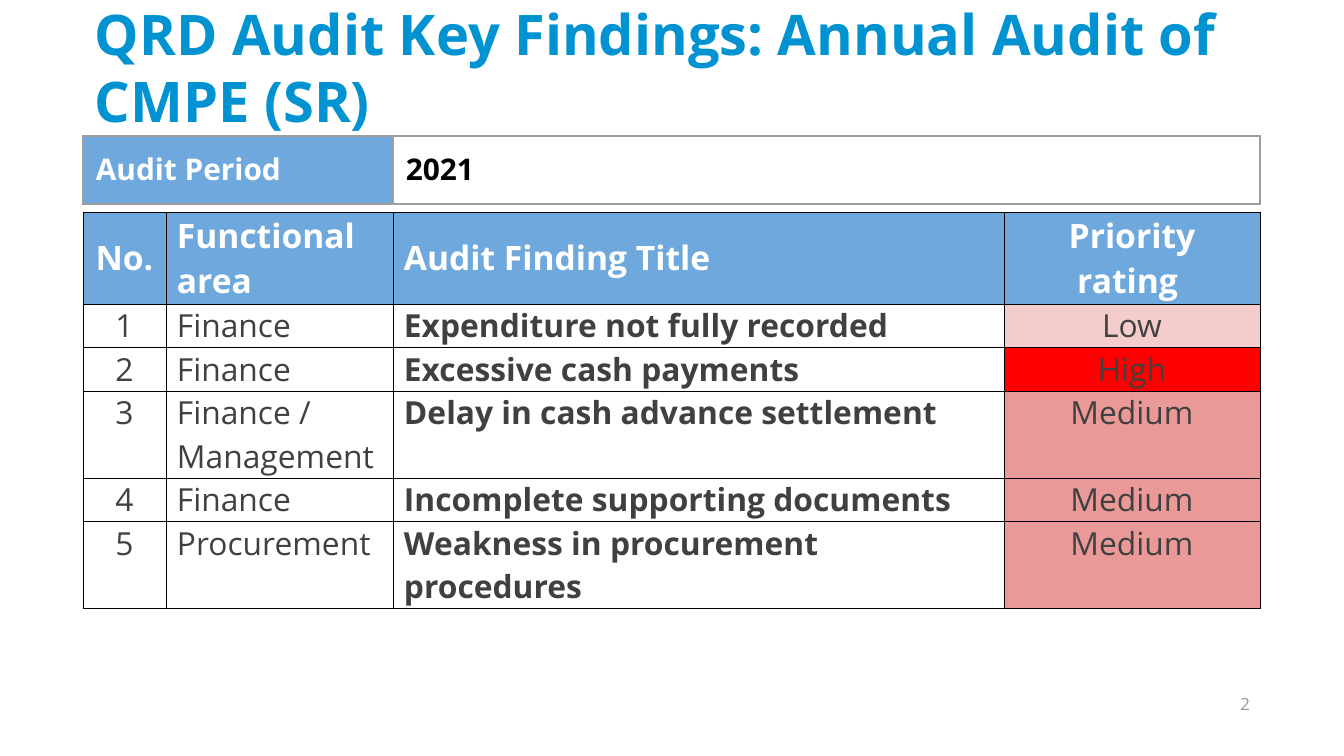
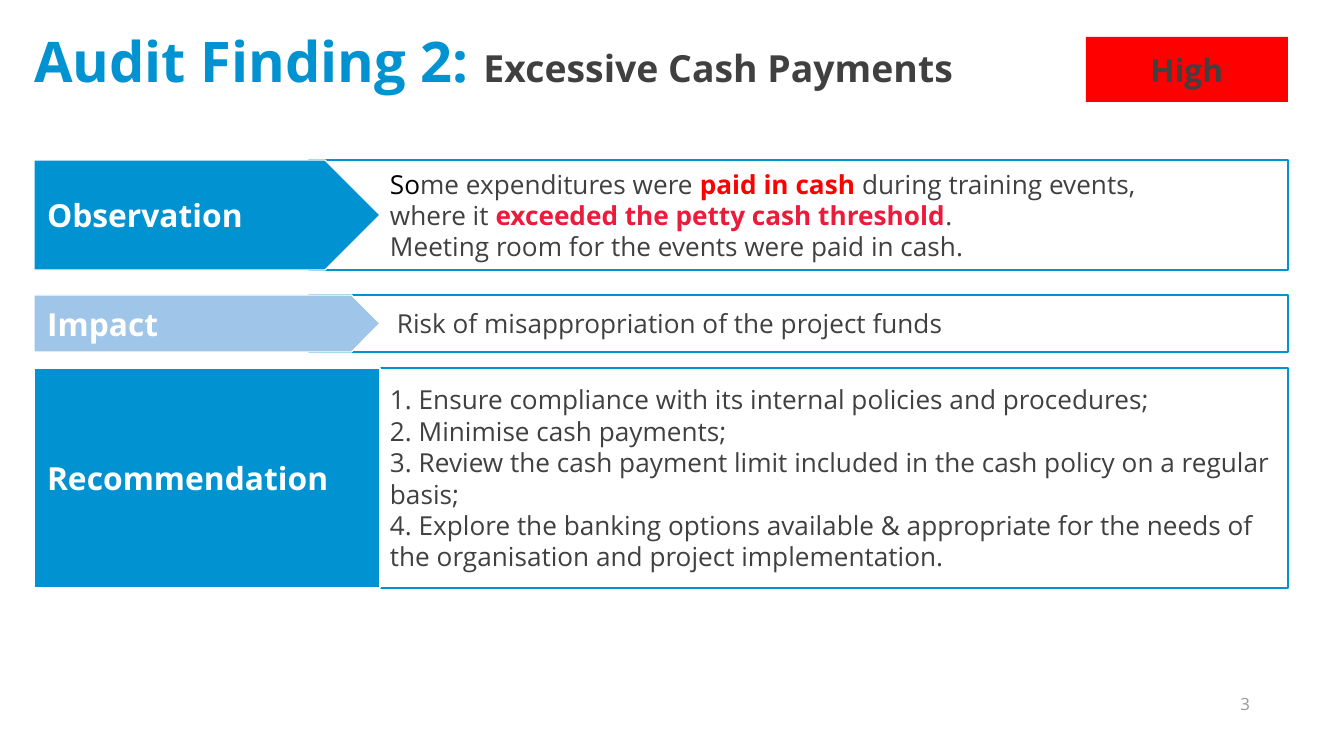
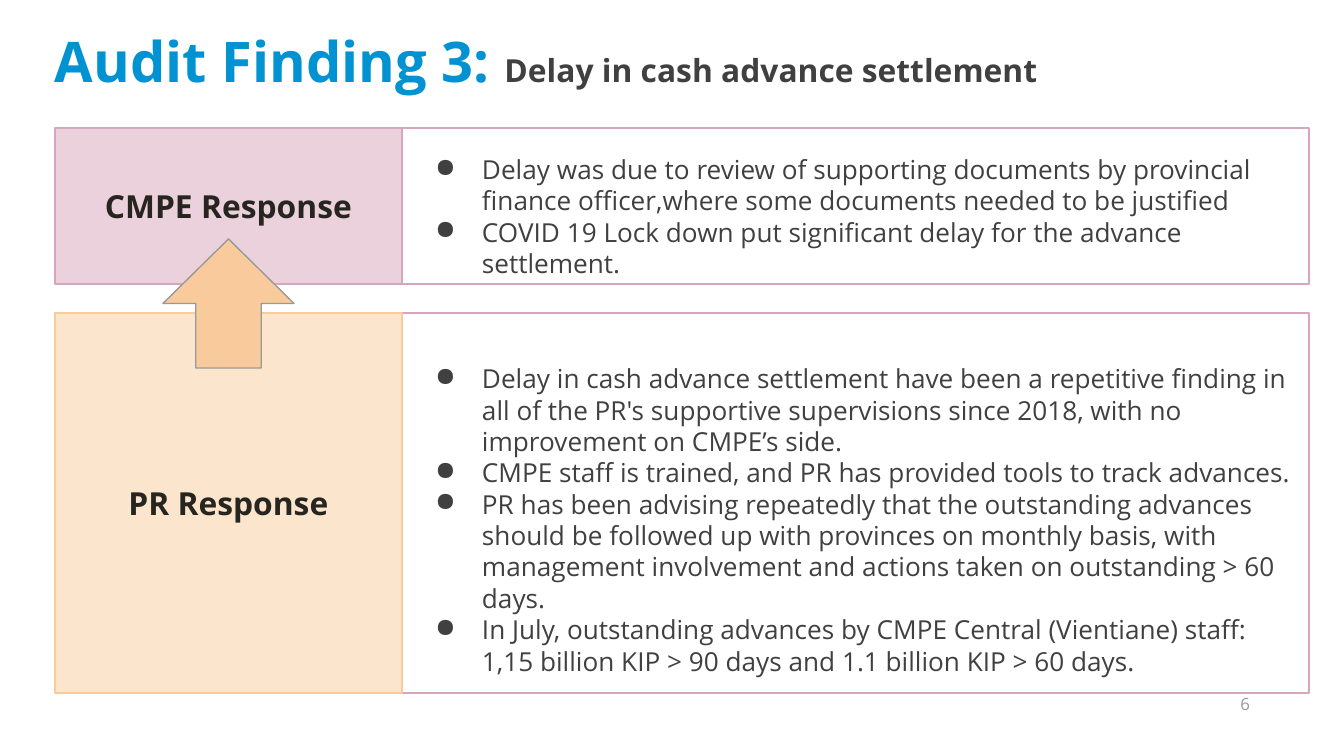
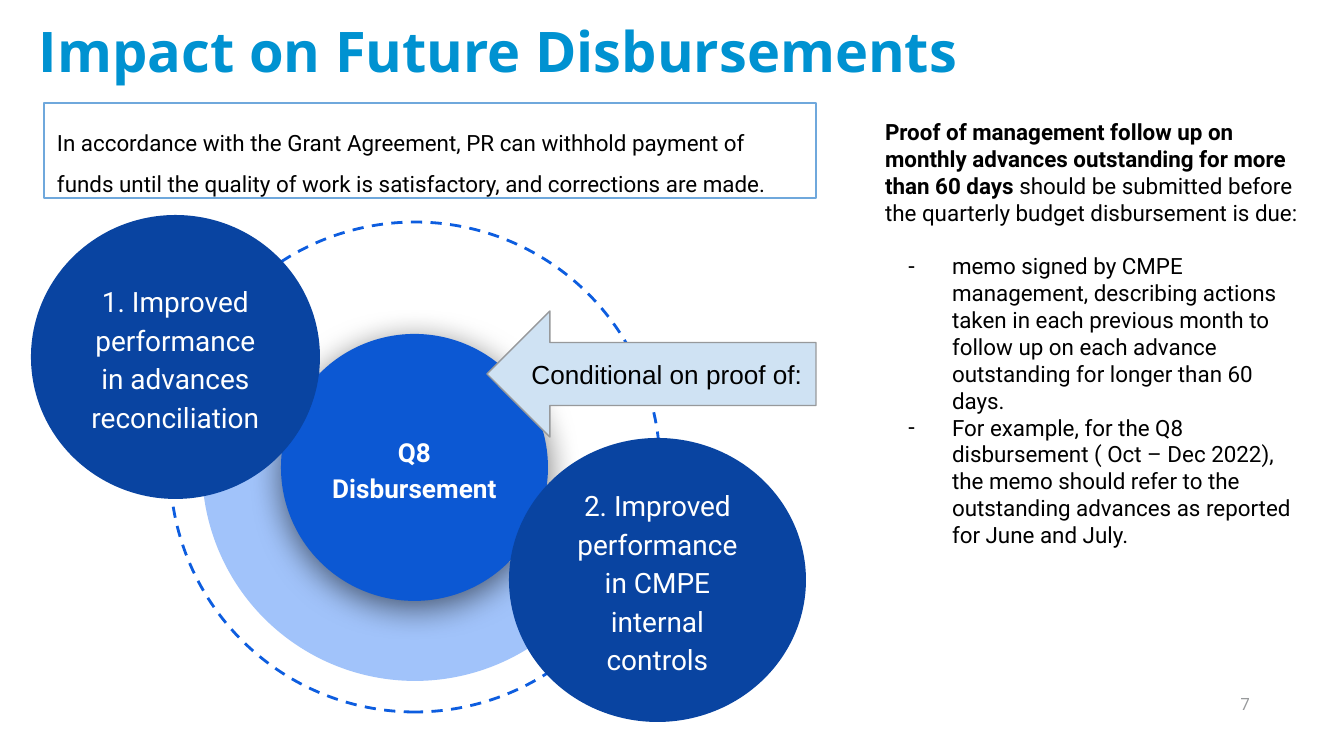
from lxml import etree
from pptx import Presentation
from pptx.dml.color import RGBColor
from pptx.enum.dml import MSO_LINE
from pptx.enum.shapes import MSO_SHAPE
from pptx.enum.text import MSO_ANCHOR, MSO_AUTO_SIZE, PP_ALIGN
from pptx.oxml.ns import qn
from pptx.util import Pt

LEFT, CENTER, RIGHT = PP_ALIGN.LEFT, PP_ALIGN.CENTER, PP_ALIGN.RIGHT
TOP, MIDDLE, BOTTOM = MSO_ANCHOR.TOP, MSO_ANCHOR.MIDDLE, MSO_ANCHOR.BOTTOM
RECT, OVAL, PENTAGON = MSO_SHAPE.RECTANGLE, MSO_SHAPE.OVAL, MSO_SHAPE.PENTAGON
PIE, UP, BACK = MSO_SHAPE.PIE, MSO_SHAPE.UP_ARROW, MSO_SHAPE.LEFT_ARROW

# Shared style
SANS, ROBOTO, ARIAL = "Open Sans", "Roboto", "Arial"
BLUE, SKY, PALE = "0092D1", "6FA8DC", "9FC5E8"
INK, BLACK, WHITE, GREY = "404040", "000000", "FFFFFF", "97999B"
RED, CRIMSON, NAVY = "FF0000", "ED1A3B", "0944A1"
PINK, PEACH = "D5A6BD", "F9CB9C"
PAD = 13                      # usual text inset
LINE_HEIGHT = 1.2             # line pitch per point of text
TITLE_ONLY, TITLE_BODY = 5, 1

# Slide 1 content
PERIOD = ("Audit Period", "2021")
HEADS = ("No.", "Functional area", "Audit Finding Title", "Priority rating ")
FINDINGS = [
    ("1", "Finance", "Expenditure not fully recorded", "Low"),
    ("2", "Finance", "Excessive cash payments", "High"),
    ("3", "Finance / Management", "Delay in cash advance settlement", "Medium"),
    ("4", "Finance", "Incomplete supporting documents", "Medium"),
    ("5", "Procurement", "Weakness in procurement procedures", "Medium"),
]
RATING_FILLS = {"Low": "F4CCCC", "High": RED, "Medium": "EA9999"}

# Slide 2 content: label, shape, fill, top, height, text inset, paragraphs
FINDING_ROWS = [
    ("Observation", PENTAGON, BLUE, 160, 110, 81, [
        [("So", {"color": BLACK}), ("me expenditures were ", {}),
         ("paid in cash ", {"color": RED, "bold": True}),
         ("during training events,", {})],
        [("where it ", {}),
         ("exceeded the petty cash threshold", {"color": CRIMSON, "bold": True}),
         (".", {})],
        "Meeting room for the events were paid in cash."]),
    ("Impact", PENTAGON, PALE, 295, 57, 88,
     ["Risk of misappropriation of the project funds"]),
    ("Recommendation", RECT, BLUE, 368, 220, 81, [
        "1. Ensure compliance with its internal policies and procedures;",
        "2. Minimise cash payments;",
        "3. Review the cash payment limit included in the cash policy on a "
        "regular basis;",
        "4. Explore the banking options available & appropriate for the needs "
        "of the organisation and project implementation."]),
]

# Slide 3 content: label, fill, line, top, height, vertical insets, bullets
RESPONSES = [
    ("CMPE Response", "EAD1DC", PINK, 128, 156, (20, 0), [
        "Delay was due to review of supporting documents by provincial finance "
        "officer,where some documents needed to be justified",
        "COVID 19 Lock down put significant delay for the advance settlement."]),
    ("PR Response", "FCE5CD", PEACH, 313, 380, (46, PAD), [
        "Delay in cash advance settlement have been a repetitive finding in all "
        "of the PR's supportive supervisions since 2018, with no improvement on "
        "CMPE’s side.",
        "CMPE staff is trained, and PR has provided tools to track advances.",
        "PR has been advising repeatedly that the outstanding advances should be "
        "followed up with provinces on monthly basis, with management "
        "involvement and actions taken on outstanding > 60 days.",
        "In July, outstanding advances by CMPE Central (Vientiane) staff: 1,15 "
        "billion KIP > 90 days and 1.1 billion KIP > 60 days."]),
]

# Slide 4 content
GRANT_RULE = ("In accordance with the Grant Agreement, PR can withhold payment of "
              "funds until the quality of work is satisfactory, and corrections "
              "are made.")
CONDITIONS = [
    ("1. Improved performance in advances reconciliation", (31, 215, 289, 284)),
    ("2. Improved performance in CMPE internal controls", (509, 438, 297, 284)),
]
PROOF = [
    ("Proof of management follow up on monthly advances outstanding for more "
     "than 60 days", {"bold": True}),
    (" should be submitted before the quarterly budget disbursement is due:", {}),
]
PROOF_ITEMS = [
    "memo signed by CMPE management, describing actions taken in each previous "
    "month to follow up on each advance outstanding for longer than 60 days.",
    "For example, for the Q8 disbursement ( Oct – Dec 2022), the memo should "
    "refer to the outstanding advances as reported for June and July.",
]


# Helpers
def px(n):
    return round(n * 914400 / 134.4)


def rgb(color):
    return RGBColor.from_string(color)


def set_bullet(p, bullet):
    pPr = p._p.get_or_add_pPr()
    char, left, hang = bullet or (None, 0, 0)
    pPr.set("marL", str(px(left)))
    pPr.set("indent", str(px(-hang)))
    if char:
        etree.SubElement(pPr, qn("a:buChar")).set("char", char)
    else:
        etree.SubElement(pPr, qn("a:buNone"))


def write(tf, paras, size, color=INK, bold=False, font=SANS, align=LEFT,
          lead=1, bullet=None, before=0):
    """Append paragraphs; each is a string or a list of (text, changes)."""
    for i, runs in enumerate(paras):
        p = tf.add_paragraph() if tf.text else tf.paragraphs[0]
        set_bullet(p, bullet)
        p.alignment = align
        p.space_before = Pt(before if i == 0 else 0)
        if lead:
            p.line_spacing = Pt(size * LINE_HEIGHT * lead)
        for text, changes in [(runs, {})] if isinstance(runs, str) else runs:
            r = p.add_run()
            r.text = text
            r.font.name = font
            r.font.size = Pt(changes.get("size", size))
            r.font.bold = changes.get("bold", bold)
            r.font.color.rgb = rgb(changes.get("color", color))


def frame(sp, insets=(PAD, PAD, PAD, PAD), anchor=MIDDLE):
    tf = sp.text_frame
    tf.word_wrap = True
    tf.auto_size = MSO_AUTO_SIZE.NONE
    tf.vertical_anchor = anchor
    (tf.margin_left, tf.margin_top,
     tf.margin_right, tf.margin_bottom) = map(px, insets)
    return tf


def place(sp, box):
    sp.left, sp.top, sp.width, sp.height = map(px, box)


def add_shape(slide, kind, box, fill=None, line=None, width=0.75):
    sp = slide.shapes.add_shape(kind, *map(px, box))
    sp.shadow.inherit = False
    if fill:
        sp.fill.solid()
        sp.fill.fore_color.rgb = rgb(fill)
    else:
        sp.fill.background()
    if line:
        sp.line.color.rgb = rgb(line)
        sp.line.width = Pt(width)
    else:
        sp.line.fill.background()
    return sp


def add_slide(prs, number, title, left, top, width=1156, layout=TITLE_ONLY):
    slide = prs.slides.add_slide(prs.slide_layouts[layout])
    place(slide.shapes.title, (left, top, width, 110))
    write(frame(slide.shapes.title, (0, 0, 0, 0)), [title], 30, BLUE, True)
    sp = slide.shapes.add_textbox(*map(px, (1212, 687, 38, 27)))
    write(frame(sp, (0, 0, 0, 0), BOTTOM), [number], 9, GREY, align=RIGHT)
    return slide


def add_table(slide, left, top, cols, rows):
    box = (left, top, sum(cols), sum(rows))
    table = slide.shapes.add_table(len(rows), len(cols), *map(px, box)).table
    table.first_row = table.horz_banding = False
    for col, width in zip(table.columns, cols):
        col.width = px(width)
    for row, height in zip(table.rows, rows):
        row.height = px(height)
    return table


def fill_cell(cell, text, size, color, bold, fill, border, width,
              insets, align=LEFT, anchor=TOP):
    (cell.margin_left, cell.margin_top,
     cell.margin_right, cell.margin_bottom) = map(px, insets)
    cell.vertical_anchor = anchor
    if fill:
        cell.fill.solid()
        cell.fill.fore_color.rgb = rgb(fill)
    else:
        cell.fill.background()
    tcPr = cell._tc.get_or_add_tcPr()
    for i, side in enumerate(("lnL", "lnR", "lnT", "lnB")):
        ln = etree.Element(qn("a:" + side), w=str(Pt(width)))
        solid = etree.SubElement(ln, qn("a:solidFill"))
        etree.SubElement(solid, qn("a:srgbClr"), val=border)
        tcPr.insert(i, ln)
    write(cell.text_frame, [text], size, color, bold, align=align, lead=None)


def add_soft_shadow(sp):
    effects = sp._element.spPr.find(qn("a:effectLst"))
    shadow = etree.SubElement(effects, qn("a:outerShdw"), blurRad=str(Pt(18)),
                              dist=str(Pt(4)), dir=str(90 * 60000))
    color = etree.SubElement(shadow, qn("a:srgbClr"), val=BLACK)
    etree.SubElement(color, qn("a:alpha"), val="55000")


# Slides
def findings_slide(prs):
    slide = add_slide(prs, "2", "QRD Audit Key Findings: Annual Audit of CMPE (SR)",
                      95, 12, 1216)
    table = add_table(slide, 83, 212, (83, 227, 611, 256), (92, 43, 43, 87, 43, 87))
    for r, row in enumerate([HEADS] + FINDINGS):
        for c, text in enumerate(row):
            head = r == 0
            fill = SKY if head else RATING_FILLS[text] if c == 3 else None
            fill_cell(table.cell(r, c), text, 18 if head else 17,
                      WHITE if head else INK, head or c == 2, fill, BLACK, 0.5,
                      (11, 0, 11, 0), CENTER if c in (0, 3) else LEFT,
                      MIDDLE if head else TOP)
    table = add_table(slide, 83, 136, (310, 867), (68,))
    for c, (text, color, fill) in enumerate(zip(PERIOD, (WHITE, BLACK), (SKY, None))):
        fill_cell(table.cell(0, c), text, 16, color, True, fill, "9E9E9E", 0.75,
                  (PAD,) * 4)


def cash_slide(prs):
    slide = add_slide(prs, "3", [("Audit Finding 2: ", {}), (
        "Excessive Cash Payments", {"size": 20, "color": INK})], 34, 5)
    for label, kind, fill, top, height, inset, paras in FINDING_ROWS:
        sp = add_shape(slide, RECT, (309, top, 979, height), WHITE, BLUE)
        write(frame(sp, (inset, 0, PAD, 0)), paras, 14)
        sp = add_shape(slide, kind, (34, top, 346, height), fill, WHITE)
        write(frame(sp), [label], 17, WHITE, True)
    sp = add_shape(slide, RECT, (1086, 37, 202, 65), RED)
    write(frame(sp), ["High"], 17, bold=True, align=CENTER)


def advances_slide(prs):
    slide = add_slide(prs, "6", [("Audit Finding 3: ", {}), (
        "Delay in cash advance settlement", {"size": 17, "color": INK})], 55, 5)
    for label, fill, line, top, height, (above, below), items in RESPONSES:
        sp = add_shape(slide, RECT, (402, top, 907, height), WHITE, PINK)
        write(frame(sp, (PAD, above, PAD, below)), items, 14, bullet=("●", 67, 47))
        sp = add_shape(slide, RECT, (55, top, 347, height), fill, line)
        write(frame(sp), [label], 17, "27251F", True, align=CENTER)
    add_shape(slide, UP, (163, 239, 131, 129), PEACH, GREY)


def disbursement_slide(prs):
    slide = add_slide(prs, "7", "Impact on Future Disbursements", 39, -5,
                      layout=TITLE_BODY)
    # Rings and the circle they surround
    ring = add_shape(slide, OVAL, (170, 222, 490, 490), None, "0D5DDF", 1.5)
    ring.line.dash_style = MSO_LINE.DASH
    ring.rotation = 270
    half = add_shape(slide, PIE, (202, 255, 426, 426), "A1C3FA")
    half.adjustments[0], half.adjustments[1] = 26.9, 135.11
    hub = add_shape(slide, OVAL, (281, 334, 267, 267), "0C58D3")
    add_soft_shadow(hub)
    write(frame(hub, (5, 0, 5, 0)), ["Q8 Disbursement"], 14, WHITE, True, ROBOTO,
          CENTER, 1.15)
    for text, box in CONDITIONS:
        sp = add_shape(slide, OVAL, box, NAVY)
        write(frame(sp, (PAD, 0, PAD, 0)), [text], 15, WHITE, False, ROBOTO,
              CENTER, 1.15)
    sp = add_shape(slide, BACK, (487, 311, 329, 126), "CFE2F3", GREY)
    write(frame(sp, (PAD, 0, 5, 0)), ["Conditional on proof of:"], 14, BLACK,
          font=ARIAL)

    # Proof required and the rule behind it
    body = slide.placeholders[1]
    place(body, (872, 105, 441, 461))
    tf = frame(body, anchor=TOP)
    write(tf, [PROOF], 12, BLACK, font=ROBOTO)
    write(tf, PROOF_ITEMS, 12, BLACK, font=ROBOTO, bullet=("-", 67, 44), before=14.4)
    sp = add_shape(slide, RECT, (44, 103, 772, 95), None, SKY)
    write(frame(sp, anchor=TOP), [GRANT_RULE], 12, BLACK, font=ROBOTO, lead=1.5)


def main():
    prs = Presentation()
    prs.slide_width, prs.slide_height = px(1344), px(756)
    for build in (findings_slide, cash_slide, advances_slide, disbursement_slide):
        build(prs)
    prs.save("out.pptx")


if __name__ == "__main__":
    main()
